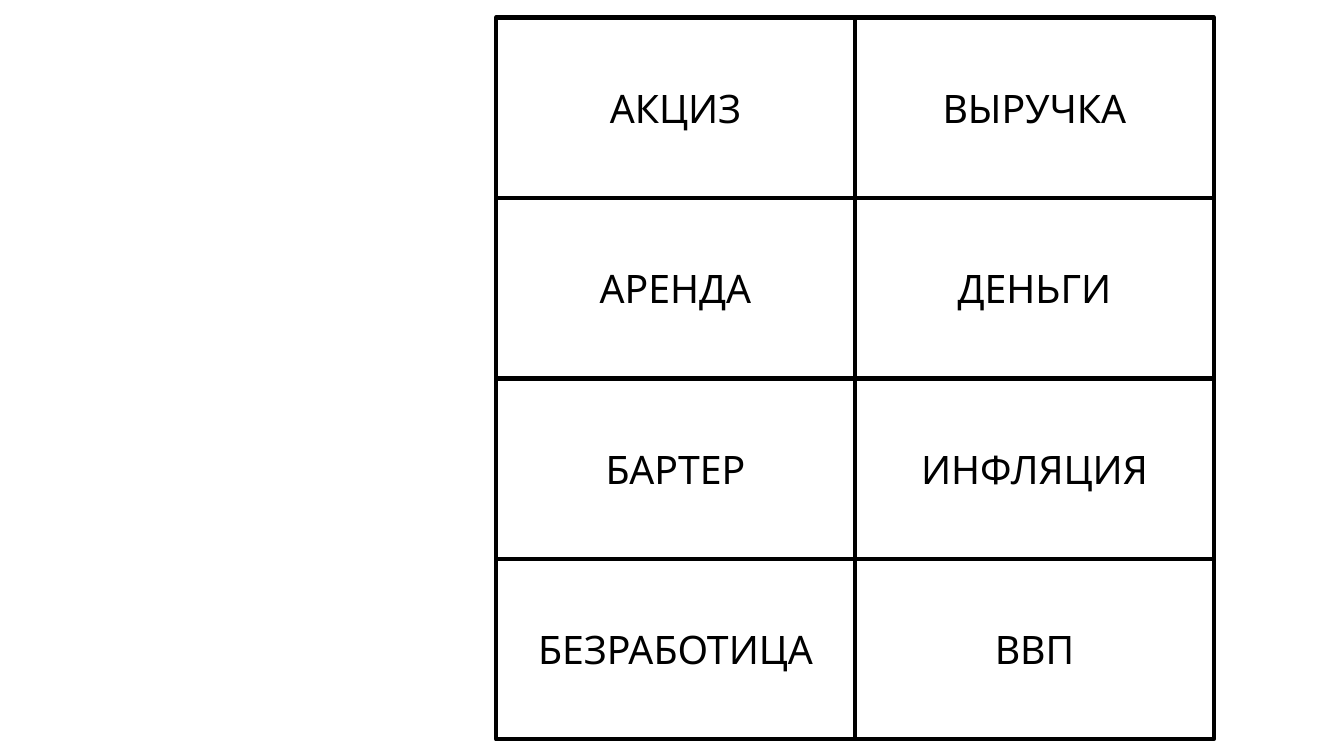
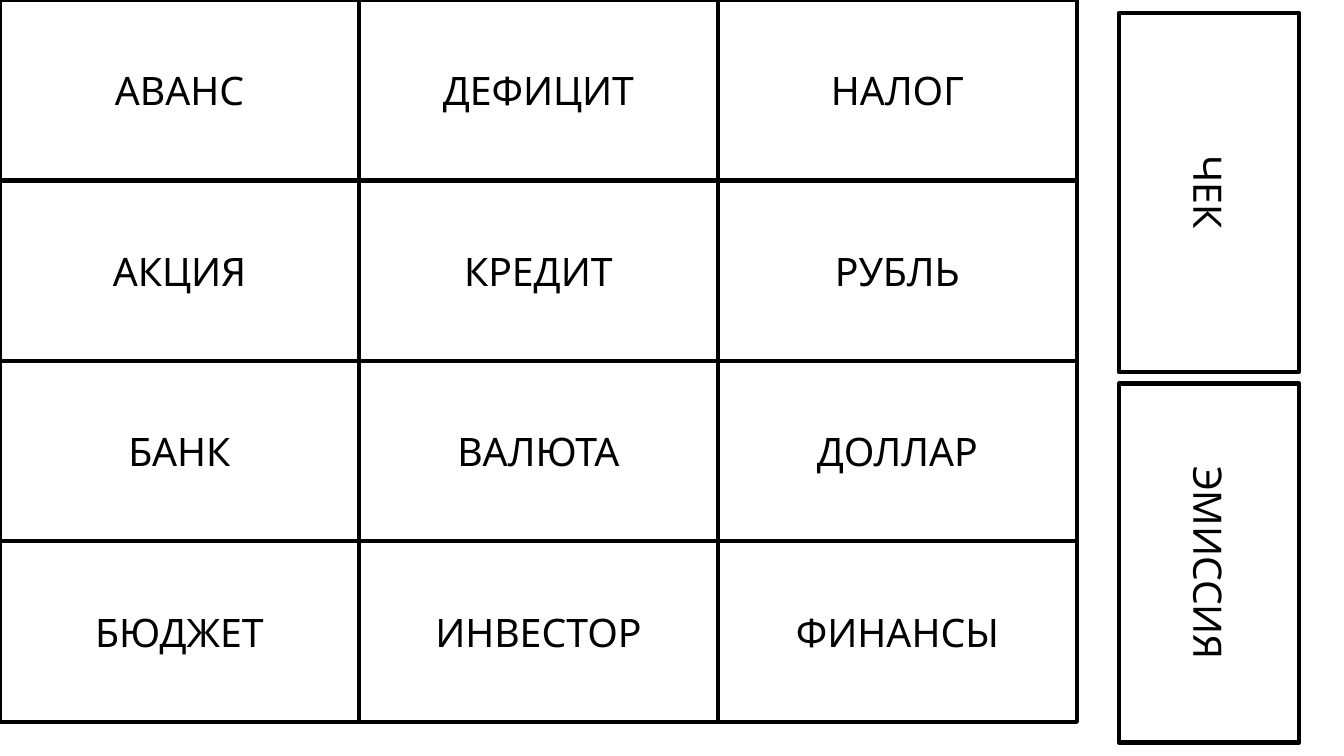
from dataclasses import dataclass

from pptx import Presentation
from pptx.dml.color import RGBColor
from pptx.enum.shapes import MSO_SHAPE
from pptx.enum.text import MSO_ANCHOR, PP_ALIGN
from pptx.util import Pt

RECTANGLE = MSO_SHAPE.RECTANGLE
MIDDLE = MSO_ANCHOR.MIDDLE
CENTER = PP_ALIGN.CENTER
BLANK_LAYOUT = 6


@dataclass(frozen=True)
class Theme:
    ink: RGBColor = RGBColor(0, 0, 0)
    font: str = "Cabin"
    text_size: float = 28
    border: float = 3
    card_width: float = 256.4
    card_height: float = 128.9


class CardDeck:
    def __init__(self, theme):
        self.theme = theme
        self.presentation = Presentation()
        self.presentation.slide_width = Pt(960)
        self.presentation.slide_height = Pt(540)
        self.slide = None

    def add_slide(self):
        layout = self.presentation.slide_layouts[BLANK_LAYOUT]
        self.slide = self.presentation.slides.add_slide(layout)

    def card(self, word, left, top, rotation=0):
        theme = self.theme
        shape = self.slide.shapes.add_shape(
            RECTANGLE, Pt(left), Pt(top), Pt(theme.card_width), Pt(theme.card_height))
        shape.rotation = rotation
        shape.shadow.inherit = False
        shape.fill.background()
        shape.line.color.rgb = theme.ink
        shape.line.width = Pt(theme.border)
        frame = shape.text_frame
        frame.word_wrap = True
        frame.vertical_anchor = MIDDLE
        paragraph = frame.paragraphs[0]
        paragraph.alignment = CENTER
        run = paragraph.add_run()
        run.text = word
        run.font.name = theme.font
        run.font.size = Pt(theme.text_size)
        run.font.color.rgb = theme.ink

    def card_grid(self, columns, left, top):
        """Lay out touching cards, one list of words per column."""
        for column, words in enumerate(columns):
            for row, word in enumerate(words):
                self.card(word, left + column * self.theme.card_width,
                          top + row * self.theme.card_height)

    def turned_cards(self, words, left, top, gap):
        """Stack cards turned clockwise; left and top are the visible corner."""
        theme = self.theme
        shift = (theme.card_width - theme.card_height) / 2
        for index, word in enumerate(words):
            visible_top = top + index * (theme.card_width + gap)
            self.card(word, left - shift, visible_top + shift, rotation=90)


def main():
    deck = CardDeck(Theme())

    deck.add_slide()
    deck.card_grid([
        ["АКЦИЗ", "АРЕНДА", "БАРТЕР", "БЕЗРАБОТИЦА"],
        ["ВЫРУЧКА", "ДЕНЬГИ", "ИНФЛЯЦИЯ", "ВВП"],
    ], left=354.3, top=12.5)

    deck.add_slide()
    deck.card_grid([
        ["АВАНС", "АКЦИЯ", "БАНК", "БЮДЖЕТ"],
        ["ДЕФИЦИТ", "КРЕДИТ", "ВАЛЮТА", "ИНВЕСТОР"],
        ["НАЛОГ", "РУБЛЬ", "ДОЛЛАР", "ФИНАНСЫ"],
    ], left=0, top=0)
    deck.turned_cards(["ЧЕК", "ЭМИССИЯ"], left=799.2, top=9.2, gap=8.4)

    deck.presentation.save("out.pptx")


if __name__ == "__main__":
    main()
